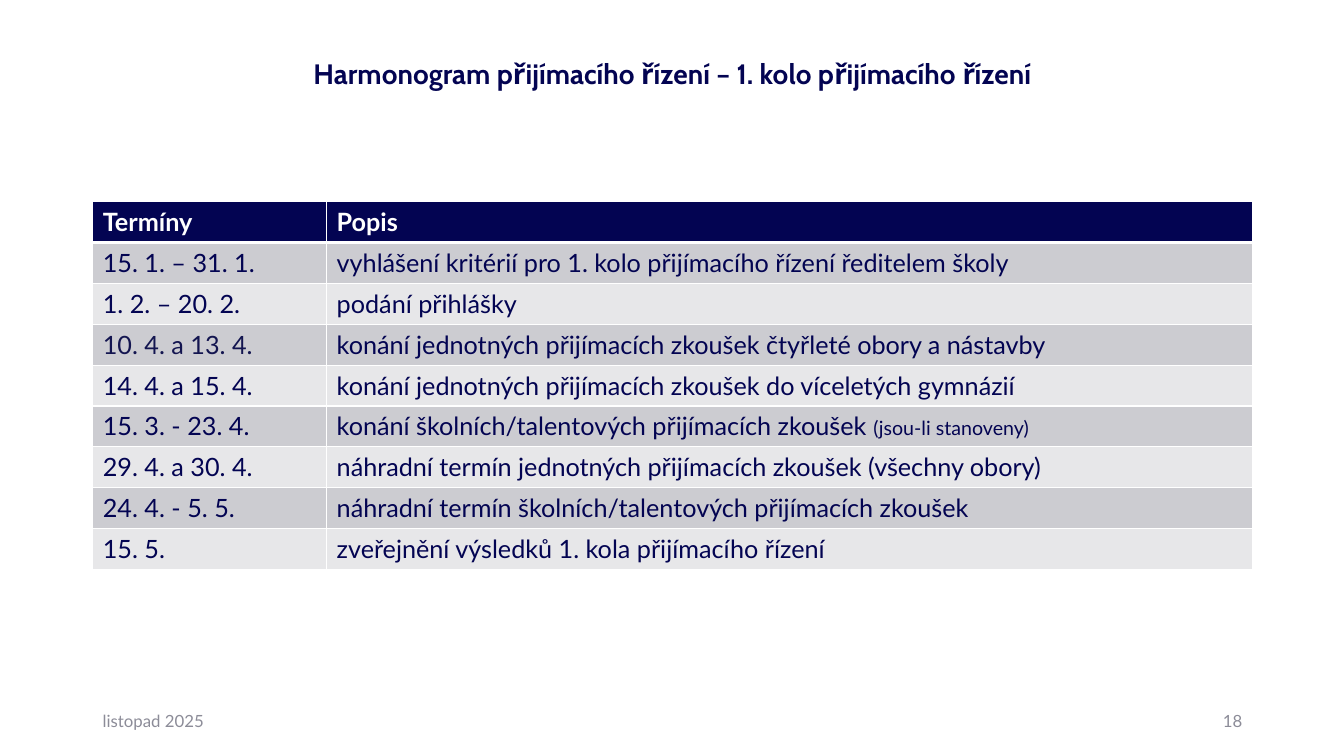
from pptx import Presentation
from pptx.dml.color import RGBColor
from pptx.enum.text import MSO_ANCHOR, PP_ALIGN
from pptx.oxml import parse_xml
from pptx.oxml.ns import nsdecls
from pptx.util import Inches, Pt

COLORS = {
    "navy": "030452",
    "soft_navy": "131550",
    "white": "FFFFFF",
    "band_dark": "CCCCD1",
    "band_light": "E7E7E9",
    "footer": "8C8C98",
}
LEFT, WIDTH = 0.92, 11.5
FOOTER_WIDTH = 3

SCHEDULE = [
    ("Termíny", "Popis"),
    ("15. 1. – 31. 1.", "vyhlášení kritérií pro 1. kolo přijímacího řízení ředitelem školy"),
    ("1. 2. – 20. 2.", "podání přihlášky"),
    ("10. 4. a 13. 4.", "konání jednotných přijímacích zkoušek čtyřleté obory a nástavby"),
    ("14. 4. a 15. 4.", "konání jednotných přijímacích zkoušek do víceletých gymnázií"),
    ("15. 3. - 23. 4.", "konání školních/talentových přijímacích zkoušek "),
    ("29. 4. a 30. 4.", "náhradní termín jednotných přijímacích zkoušek (všechny obory)"),
    ("24. 4. - 5. 5.", "náhradní termín školních/talentových přijímacích zkoušek"),
    ("15. 5.", "zveřejnění výsledků 1. kola přijímacího řízení"),
]
NOTES = {(5, 1): "(jsou-li stanoveny)"}
SOFT_CELLS = {(3, 0)}


def add_run(p, text, size, color, bold=False, font="Lato"):
    r = p.add_run()
    r.text = text
    r.font.name = font
    r.font.size = Pt(size)
    r.font.bold = bold
    r.font.color.rgb = RGBColor.from_string(COLORS[color])


def add_border(cell, side, points):
    cell._tc.get_or_add_tcPr().append(parse_xml(
        f'<a:ln{side} {nsdecls("a")} w="{Pt(points)}"><a:solidFill>'
        f'<a:srgbClr val="{COLORS["white"]}"/></a:solidFill></a:ln{side}>'))


prs = Presentation()
prs.slide_width, prs.slide_height = Inches(13.33), Inches(7.5)
s = prs.slides.add_slide(prs.slide_layouts[5])

# Title
title = s.shapes.title
title.left, title.top = Inches(LEFT), Inches(0.4)
title.width, title.height = Inches(WIDTH), Inches(0.69)
tf = title.text_frame
tf.vertical_anchor = MSO_ANCHOR.MIDDLE
p = tf.paragraphs[0]
p.alignment = PP_ALIGN.CENTER
p.line_spacing = 0.9
add_run(p, "Harmonogram přijímacího řízení – 1. kolo přijímacího řízení",
        20, "navy", bold=True, font="Cabin")

# Schedule table
table = s.shapes.add_table(len(SCHEDULE), 2, Inches(LEFT), Inches(2),
                           Inches(WIDTH), Inches(3.65)).table
table.columns[0].width = Inches(2.32)
table.columns[1].width = Inches(9.18)
for row, texts in enumerate(SCHEDULE):
    header = row == 0
    band = "navy" if header else "band_dark" if row % 2 else "band_light"
    for col, text in enumerate(texts):
        cell = table.cell(row, col)
        for side in "LRTB":
            thick = (row, side) in ((0, "B"), (1, "T"))
            add_border(cell, side, 3 if thick else 1)
        cell.fill.solid()
        cell.fill.fore_color.rgb = RGBColor.from_string(COLORS[band])
        color = "white" if header else "soft_navy" if (row, col) in SOFT_CELLS else "navy"
        p = cell.text_frame.paragraphs[0]
        add_run(p, text, 18, color, bold=header)
        if (row, col) in NOTES:
            add_run(p, NOTES[row, col], 14, color)

# Footer: date on the left, slide number on the right
for text, left, align in (
    ("listopad 2025", LEFT, PP_ALIGN.LEFT),
    ("18", LEFT + WIDTH - FOOTER_WIDTH, PP_ALIGN.RIGHT),
):
    sp = s.shapes.add_textbox(Inches(left), Inches(6.95), Inches(FOOTER_WIDTH), Inches(0.4))
    tf = sp.text_frame
    tf.word_wrap = True
    tf.vertical_anchor = MSO_ANCHOR.MIDDLE
    p = tf.paragraphs[0]
    p.alignment = align
    add_run(p, text, 12, "footer")

prs.save("out.pptx")
